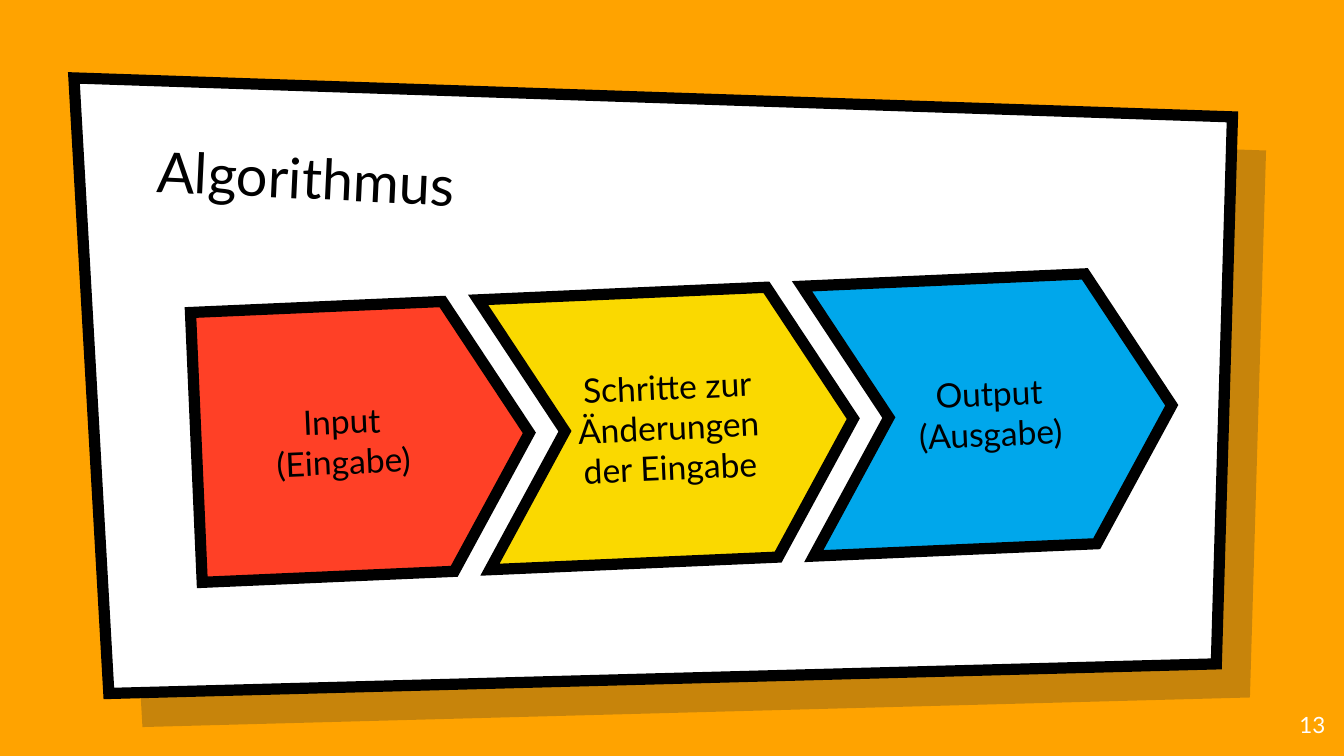
from dataclasses import dataclass

from lxml.etree import SubElement
from pptx import Presentation
from pptx.dml.color import RGBColor
from pptx.enum.shapes import MSO_SHAPE
from pptx.enum.text import MSO_ANCHOR, PP_ALIGN
from pptx.oxml.ns import qn
from pptx.util import Inches, Pt


@dataclass(frozen=True)
class Theme:
    back: str = "FFA300"
    shade: str = "001936"
    paper: str = "FFFFFF"
    ink: str = "000000"
    red: str = "FF4026"
    gold: str = "FAD900"
    blue: str = "00A7EB"
    face: str = "Lato"
    head: int = 30
    body: int = 18
    small: int = 12
    edge: int = 6


THEME = Theme()

# Grid of 100 columns; rows are as tall as columns are wide
WIDE, HIGH = 100, 56.25
CELL = Inches(10) / WIDE
CARD = [(5.5, 5.8), (91.7, 8.7), (90.5, 49.4), (8.1, 51.6)]
DROP = 2.5
TILT = -2.5


def grid(*cells):
    return [round(n * CELL) for n in cells]


def apply(item, form):
    for name, value in form.items():
        setattr(item, name, value)


def paint(shape, color, edge=True, alpha=None):
    shape.shadow.inherit = False
    shape.fill.solid()
    shape.fill.fore_color.rgb = RGBColor.from_string(color)
    props = shape.element.spPr
    if alpha:
        tone = props.find(qn("a:solidFill")).find(qn("a:srgbClr"))
        SubElement(tone, qn("a:alpha"), val=str(alpha * 1000))
    if edge:
        shape.line.color.rgb = RGBColor.from_string(THEME.ink)
        shape.line.width = Pt(THEME.edge)
        SubElement(props.find(qn("a:ln")), qn("a:miter"), lim="800000")
    else:
        shape.line.fill.background()


def write(shape, lines, size, color, align, anchor, side=1):
    frame = shape.text_frame
    pad, edge = grid(side, 1)
    apply(frame, dict(word_wrap=True, vertical_anchor=anchor,
                      margin_left=pad, margin_right=pad,
                      margin_top=edge, margin_bottom=edge))
    frame.text = "\n".join(lines)
    for para in frame.paragraphs:
        para.alignment = align
        apply(para.font, dict(name=THEME.face, size=Pt(size)))
        para.font.color.rgb = RGBColor.from_string(color)


def card(slide, color, shift=0, **look):
    first, *rest = [tuple(grid(x + shift, y + shift)) for x, y in CARD]
    pen = slide.shapes.build_freeform(*first)
    pen.add_line_segments(rest, close=True)
    paint(pen.convert_to_shape(), color, **look)


def label(slide, box, text, size, color, align, anchor, turn=0):
    shape = slide.shapes.add_textbox(*grid(*box))
    shape.rotation = turn
    write(shape, [text], size, color, align, anchor)


def step(slide, kind, box, color, lines):
    shape = slide.shapes.add_shape(kind, *grid(*box))
    shape.adjustments[0] = 0.3
    shape.rotation = TILT
    paint(shape, color)
    # Slim side margins keep the longest word on one line
    write(shape, lines, THEME.body, THEME.ink,
          PP_ALIGN.CENTER, MSO_ANCHOR.MIDDLE, side=0.8)


def main():
    deck = Presentation()
    deck.slide_width, deck.slide_height = grid(WIDE, HIGH)
    slide = deck.slides.add_slide(deck.slide_layouts[6])
    fill = slide.background.fill
    fill.solid()
    fill.fore_color.rgb = RGBColor.from_string(THEME.back)

    # Tilted card over its shade
    card(slide, THEME.shade, DROP, edge=False, alpha=22)
    card(slide, THEME.paper)

    # Title
    label(slide, (10.7, 9.6, 76.9, 8.3), "Algorithmus", THEME.head,
          THEME.ink, PP_ALIGN.LEFT, MSO_ANCHOR.BOTTOM, turn=2.7)

    # Three steps, each one row higher than the last
    steps = [
        (MSO_SHAPE.PENTAGON, 14.6, 24.8, THEME.red, ["Input", "(Eingabe)"]),
        (MSO_SHAPE.CHEVRON, 36, 27.5, THEME.gold,
         ["Schritte zur Änderungen der Eingabe"]),
        (MSO_SHAPE.CHEVRON, 60.1, 27.1, THEME.blue, ["Output", "(Ausgabe)"]),
    ]
    for i, (kind, left, width, color, lines) in enumerate(steps):
        step(slide, kind, (left, 22.7 - i, width, 20.1), color, lines)

    # Page number
    label(slide, (93.6, 51.9, 6, 4.3), "13", THEME.small,
          THEME.paper, PP_ALIGN.RIGHT, MSO_ANCHOR.TOP)

    deck.save("out.pptx")


if __name__ == "__main__":
    main()
